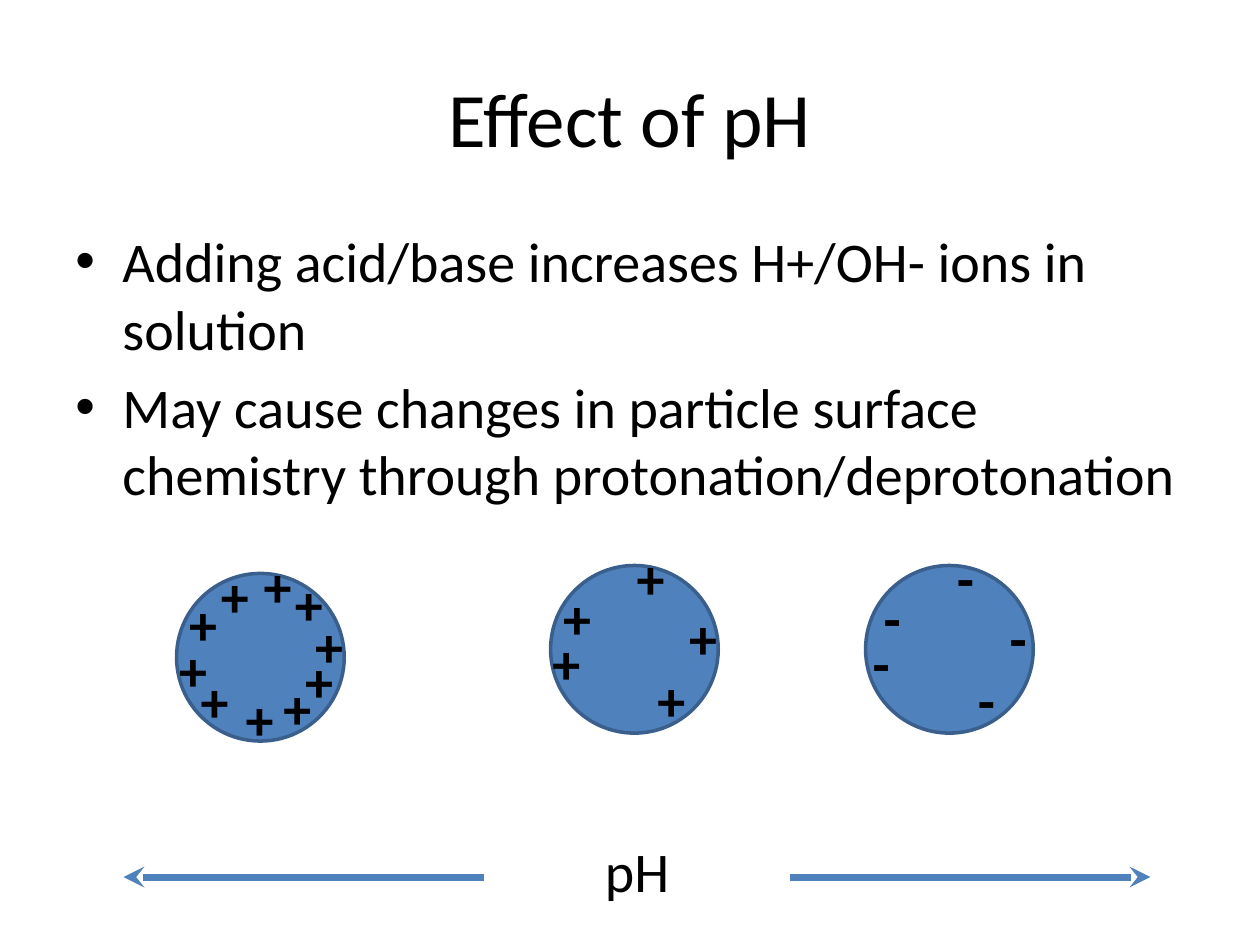
"""Build the slide on how pH changes the surface charge of particles."""
from dataclasses import dataclass

from lxml import etree
from pptx import Presentation
from pptx import util as u
from pptx.dml.color import RGBColor
from pptx.enum import shapes, text
from pptx.oxml.ns import qn
from pptx.slide import Slide
from pptx.text.text import _Paragraph

COLORS = {"text": "000000", "particle": "4F81BD", "outline": "3A5F8C"}
FONT = "Calibri"
DIAMETER = 3.38
SIGN_WIDTH, SIGN_HEIGHT = 1.07, 1.63
ARROW_Y = 17.68
INDENT = u.Cm(0.95)

FEW = ((-0.22, 1.14), (0, 0.23), (1.48, -0.56), (2.54, 0.64), (1.9, 1.9))
MANY = (
    (-0.2, 1.12), (0, 0.2), (0.64, -0.36), (1.5, -0.56), (2.13, -0.2),
    (2.54, 0.64), (2.34, 1.35), (1.9, 1.9), (0.23, 1.75), (1.14, 2.11),
)


@dataclass(frozen=True)
class Particle:
    """A charged particle, with sign offsets from its top left corner."""
    left: float
    top: float
    sign: str
    offsets: tuple[tuple[float, float], ...]


@dataclass(frozen=True)
class Label:
    """A block of text, one paragraph per line."""
    left: float
    top: float
    width: float
    height: float
    lines: tuple[str, ...]
    size: int = 32
    bold: bool = False
    bulleted: bool = False
    anchor: text.MSO_ANCHOR = text.MSO_ANCHOR.TOP


@dataclass(frozen=True)
class Arrow:
    """A horizontal arrow along the pH axis."""
    start: float
    end: float


HEADINGS = (
    Label(1.27, 0.76, 22.86, 3.18, ("Effect of pH",), size=44,
          anchor=text.MSO_ANCHOR.MIDDLE),
    Label(1.27, 4.45, 22.86, 12.57, (
        "Adding acid/base increases H+/OH- ions in solution",
        "May cause changes in particle surface chemistry through "
        "protonation/deprotonation",
    ), bulleted=True),
)
PARTICLES = (
    Particle(11.1, 11.4, "+", FEW),
    Particle(17.45, 11.4, "-", FEW),
    Particle(3.56, 11.56, "+", MANY),
)
AXIS = Label(5.77, 16.74, 14.15, SIGN_HEIGHT, ("pH",))
ARROWS = (Arrow(9.75, 2.49), Arrow(15.93, 23.19))


def color(name: str) -> RGBColor:
    """Look up a named colour."""
    return RGBColor.from_string(COLORS[name])


def add_bullet(paragraph: _Paragraph) -> None:
    """Give a paragraph a hanging round bullet."""
    properties = paragraph._p.get_or_add_pPr()
    properties.set("marL", str(INDENT))
    properties.set("indent", str(-INDENT))
    etree.SubElement(properties, qn("a:buFont"), typeface="Arial")
    etree.SubElement(properties, qn("a:buChar"), char="•")


def draw_label(slide: Slide, label: Label) -> None:
    """Draw a block of text."""
    box = slide.shapes.add_textbox(u.Cm(label.left), u.Cm(label.top),
                                   u.Cm(label.width), u.Cm(label.height))
    frame = box.text_frame
    frame.word_wrap = True
    frame.vertical_anchor = label.anchor
    frame.text = "\n".join(label.lines)
    for paragraph in frame.paragraphs:
        if label.bulleted:
            add_bullet(paragraph)
            paragraph.space_before = u.Pt(label.size * 0.2)
        else:
            paragraph.alignment = text.PP_ALIGN.CENTER
        font = paragraph.font
        font.name = FONT
        font.size = u.Pt(label.size)
        font.bold = label.bold
        font.color.rgb = color("text")


def draw_particle(slide: Slide, particle: Particle) -> None:
    """Draw a particle and the charges on its surface."""
    body = slide.shapes.add_shape(
        shapes.MSO_SHAPE.OVAL, u.Cm(particle.left), u.Cm(particle.top),
        u.Cm(DIAMETER), u.Cm(DIAMETER))
    body.shadow.inherit = False
    body.fill.solid()
    body.fill.fore_color.rgb = color("particle")
    body.line.color.rgb = color("outline")
    body.line.width = u.Pt(2)
    for across, down in particle.offsets:
        draw_label(slide, Label(particle.left + across, particle.top + down,
                                SIGN_WIDTH, SIGN_HEIGHT, (particle.sign,),
                                bold=True))


def draw_arrow(slide: Slide, arrow: Arrow) -> None:
    """Draw an arrow with a stealth head at its end."""
    shaft = slide.shapes.add_connector(
        shapes.MSO_CONNECTOR.STRAIGHT, u.Cm(arrow.start), u.Cm(ARROW_Y),
        u.Cm(arrow.end), u.Cm(ARROW_Y))
    shaft.line.color.rgb = color("particle")
    shaft.line.width = u.Pt(4)
    properties = shaft._element.spPr
    etree.SubElement(properties.find(qn("a:ln")), qn("a:tailEnd"),
                     type="stealth")
    etree.SubElement(properties, qn("a:effectLst"))


def main() -> None:
    """Build and save the slide."""
    deck = Presentation()
    deck.slide_width, deck.slide_height = u.Cm(25.4), u.Cm(19.05)
    slide = deck.slides.add_slide(deck.slide_layouts[6])
    for label in (*HEADINGS, AXIS):
        draw_label(slide, label)
    for arrow in ARROWS:
        draw_arrow(slide, arrow)
    for particle in PARTICLES:
        draw_particle(slide, particle)
    deck.save("out.pptx")


if __name__ == "__main__":
    main()
